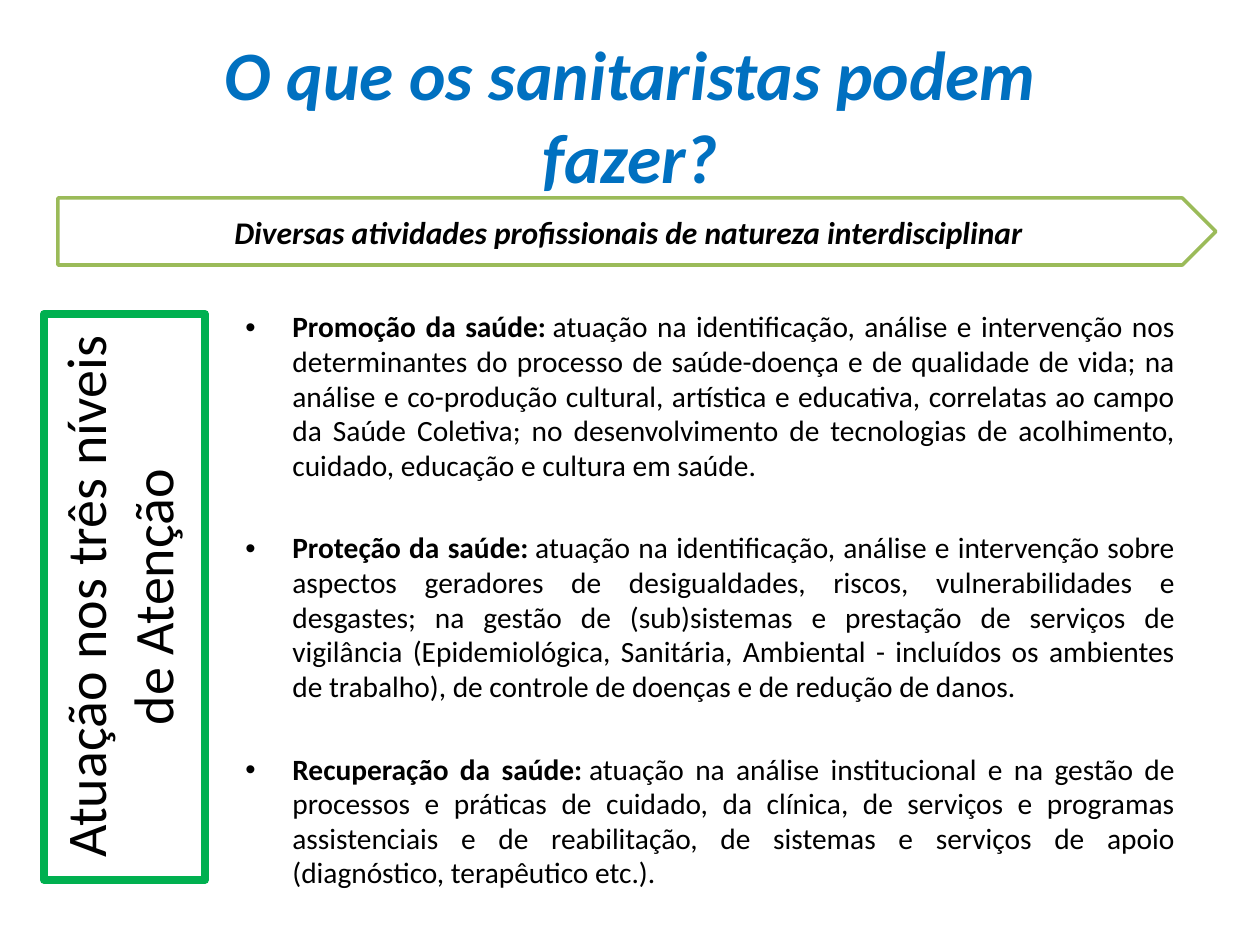
from dataclasses import dataclass

from lxml.etree import SubElement
from pptx import Presentation
from pptx.dml.color import RGBColor
from pptx.enum.shapes import MSO_SHAPE
from pptx.enum.text import MSO_ANCHOR, MSO_AUTO_SIZE, PP_ALIGN
from pptx.oxml.ns import qn
from pptx.util import Emu, Pt

SCALE = 914400 / 126  # EMU per px
FONT = "Calibri"
BLUE = RGBColor(0x00, 0x70, 0xC0)
BLACK = RGBColor(0x00, 0x00, 0x00)
WHITE = RGBColor(0xFF, 0xFF, 0xFF)
GREEN = RGBColor(0x00, 0xB0, 0x50)
OLIVE = RGBColor(0x9B, 0xBB, 0x59)


@dataclass(frozen=True)
class Box:
    left: int
    top: int
    width: int
    height: int

    def emu(self) -> list[Emu]:
        return [px(v) for v in (self.left, self.top, self.width, self.height)]


@dataclass(frozen=True)
class Level:
    name: str
    text: str


LEVELS = [
    Level("Promoção da saúde:",
          "atuação na identificação, análise e intervenção nos determinantes do "
          "processo de saúde-doença e de qualidade de vida; na análise e co-produção "
          "cultural, artística e educativa, correlatas ao campo da Saúde Coletiva; no "
          "desenvolvimento de tecnologias de acolhimento, cuidado, educação e cultura "
          "em saúde."),
    Level("Proteção da saúde:",
          "atuação na identificação, análise e intervenção sobre aspectos geradores de "
          "desigualdades, riscos, vulnerabilidades e desgastes; na gestão de "
          "(sub)sistemas e prestação de serviços de vigilância (Epidemiológica, "
          "Sanitária, Ambiental - incluídos os ambientes de trabalho), de controle de "
          "doenças e de redução de danos."),
    Level("Recuperação da saúde:",
          "atuação na análise institucional e na gestão de processos e práticas de "
          "cuidado, da clínica, de serviços e programas assistenciais e de "
          "reabilitação, de sistemas e serviços de apoio (diagnóstico, terapêutico "
          "etc.)."),
]


def px(value: int) -> Emu:
    return Emu(round(value * SCALE))


def write(para, text: str, *, size: float, color=BLACK, bold=False,
          italic=False, align=PP_ALIGN.CENTER) -> None:
    para.alignment = align
    run = para.add_run()
    run.text = text
    font = run.font
    font.name, font.size, font.bold, font.italic = FONT, Pt(size), bold, italic
    font.color.rgb = color


def place(shape, box: Box) -> None:
    shape.left, shape.top, shape.width, shape.height = box.emu()


def setup(frame, anchor):
    frame.word_wrap = True
    frame.auto_size = MSO_AUTO_SIZE.NONE
    frame.vertical_anchor = anchor
    return frame


def panel(slide, kind, box: Box, line: RGBColor, width: float, anchor, fill=None):
    shape = slide.shapes.add_shape(kind, *box.emu())
    shape.shadow.inherit = False
    if fill is None:
        shape.fill.background()
    else:
        shape.fill.solid()
        shape.fill.fore_color.rgb = fill
    shape.line.color.rgb = line
    shape.line.width = Pt(width)
    return setup(shape.text_frame, anchor)


def bullet(para, indent: int) -> None:
    props = para._p.get_or_add_pPr()
    props.set("marL", str(px(indent)))
    props.set("indent", str(-px(indent)))
    SubElement(props, qn("a:buFont")).set("typeface", "Arial")
    SubElement(props, qn("a:buChar")).set("char", "•")


def add_list(slide, box: Box, levels: list[Level]) -> None:
    frame = setup(slide.shapes.add_textbox(*box.emu()).text_frame, MSO_ANCHOR.TOP)
    for i, level in enumerate(levels):
        para = frame.add_paragraph() if i else frame.paragraphs[0]
        para.line_spacing = 0.98
        para.space_before = Pt(27.4 if i else 0)
        bullet(para, 47)
        write(para, level.name, size=16.8, bold=True, align=PP_ALIGN.JUSTIFY)
        write(para, "\N{NO-BREAK SPACE}" + level.text, size=16.8,
              align=PP_ALIGN.JUSTIFY)


def main() -> None:
    deck = Presentation()
    deck.slide_width, deck.slide_height = px(1260), px(945)
    slide = deck.slides.add_slide(deck.slide_layouts[5])

    # Title
    title = slide.shapes.title
    place(title, Box(139, 64, 983, 101))
    head = setup(title.text_frame, MSO_ANCHOR.MIDDLE)
    write(head.paragraphs[0], "O que os sanitaristas podem fazer?",
          size=39.6, color=BLUE, bold=True, italic=True)

    # Levels of care
    add_list(slide, Box(233, 304, 954, 595), LEVELS)

    # Upright label
    side = panel(slide, MSO_SHAPE.RECTANGLE, Box(44, 314, 161, 566),
                 GREEN, 4.5, MSO_ANCHOR.TOP)
    side._txBody.bodyPr.set("vert", "vert270")
    write(side.paragraphs[0], "Atuação nos três níveis de Atenção", size=32)

    # Arrow banner
    banner = panel(slide, MSO_SHAPE.PENTAGON, Box(58, 198, 1158, 67),
                   OLIVE, 2, MSO_ANCHOR.MIDDLE, fill=WHITE)
    write(banner.paragraphs[0],
          "Diversas atividades profissionais de natureza interdisciplinar",
          size=18, bold=True, italic=True)

    deck.save("out.pptx")


if __name__ == "__main__":
    main()
